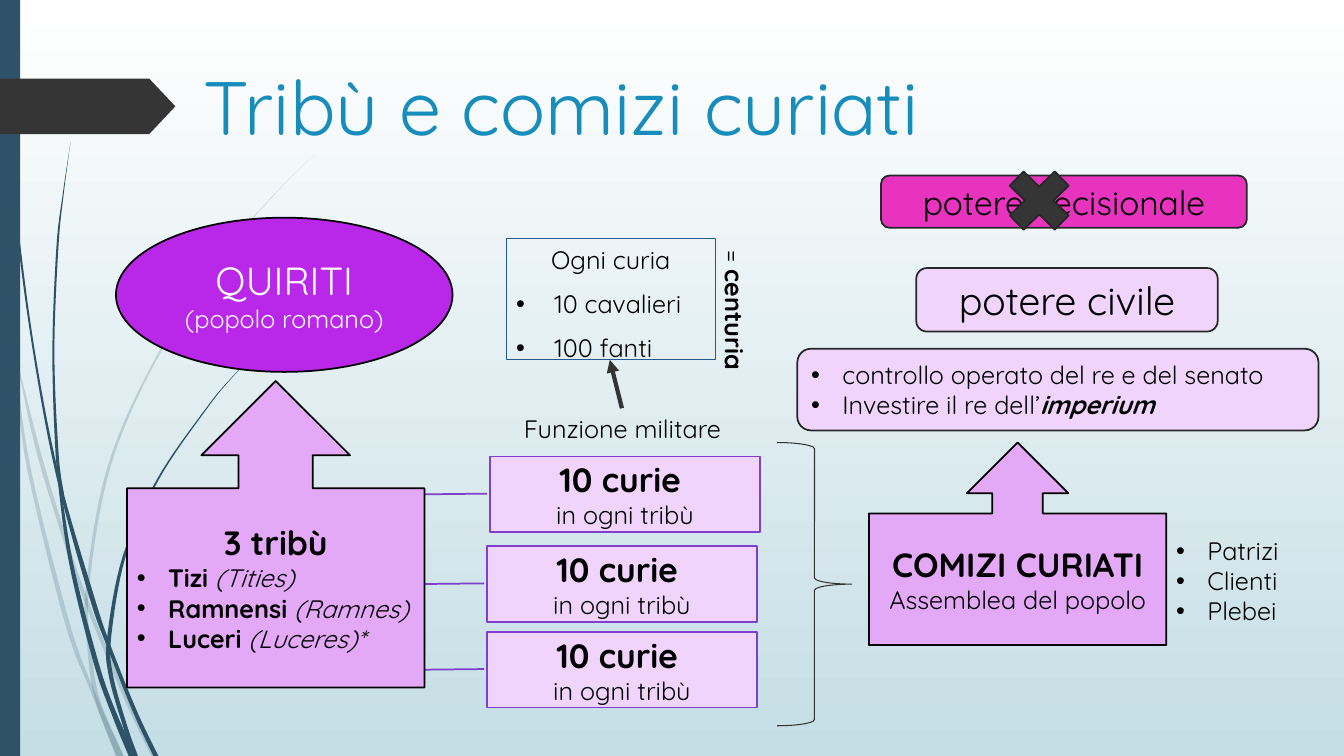
from dataclasses import dataclass

from lxml import etree
from pptx import Presentation
from pptx.dml.color import RGBColor
from pptx.enum.shapes import MSO_CONNECTOR, MSO_SHAPE
from pptx.enum.text import MSO_ANCHOR, MSO_AUTO_SIZE, PP_ALIGN
from pptx.oxml.ns import qn
from pptx.util import Inches, Pt

RECT, ELLIPSE, ROUNDED = MSO_SHAPE.RECTANGLE, MSO_SHAPE.OVAL, MSO_SHAPE.ROUNDED_RECTANGLE
UP_ARROW, CALLOUT = MSO_SHAPE.UP_ARROW_CALLOUT, MSO_SHAPE.LINE_CALLOUT_1
BRACE, CROSS, TAG = MSO_SHAPE.RIGHT_BRACE, MSO_SHAPE.MATH_MULTIPLY, MSO_SHAPE.PENTAGON
STRAIGHT = MSO_CONNECTOR.STRAIGHT
FIXED_SIZE = MSO_AUTO_SIZE.NONE
LEFT, CENTER = PP_ALIGN.LEFT, PP_ALIGN.CENTER
TOP, MIDDLE = MSO_ANCHOR.TOP, MSO_ANCHOR.MIDDLE

WHITE = RGBColor(0xFF, 0xFF, 0xFF)
BLACK = RGBColor(0x00, 0x00, 0x00)
MIST = RGBColor(0xC5, 0xDE, 0xE5)
NAVY = RGBColor(0x2E, 0x53, 0x69)
FRAME_BLUE = RGBColor(0x26, 0x59, 0x91)
TITLE_BLUE = RGBColor(0x17, 0x8D, 0xBB)
CHARCOAL = RGBColor(0x35, 0x35, 0x35)
GRAPHITE = RGBColor(0x33, 0x33, 0x33)
OUTLINE = RGBColor(0x27, 0x27, 0x27)
LILAC = RGBColor(0xF1, 0xD4, 0xFB)
ORCHID = RGBColor(0xE3, 0xA9, 0xF6)
VIOLET = RGBColor(0x7E, 0x40, 0xCC)
PURPLE = RGBColor(0xB9, 0x27, 0xE9)
MAGENTA = RGBColor(0xE8, 0x33, 0xBF)

COLUMNS, ROWS = 40, 30

# Centre line of each grass blade: column, row, width in columns
PALE_BLADES = [
    [(0, 11.6, 0), (0.3, 13.9, 0.04), (0.48, 15.04, 0.06), (0.89, 18.78, 0.11),
     (2.02, 24.8, 0.14), (2.78, 27.5, 0.12), (3.57, 30, 0.2)],
    [(0.42, 13.8, 0), (1.08, 17.6, 0.12), (1.8, 20.84, 0.12), (2.58, 23.9, 0.12),
     (3.75, 27.7, 0.13), (4.58, 30, 0.15)],
    [(9.36, 6.12, 0), (8.04, 7.9, 0.02), (6.86, 9.78, 0.04), (4.77, 13.94, 0.06),
     (3.26, 18.46, 0.09), (2.6, 23.36, 0.1), (2.67, 25.84, 0.12), (2.91, 27.8, 0.14), (3.57, 30, 0.24)],
]
DARK_BLADES = [
    [(0.1, 0, 0.03), (0.22, 4.4, 0.03), (0.54, 9.3, 0.06), (1.04, 14.2, 0.06), (1.72, 18.9, 0.09),
     (2.72, 23.64, 0.15), (3.25, 25.68, 0.12), (4.03, 28.28, 0.13), (4.64, 30, 0.15)],
    [(1.7, 18.5, 0.06), (2.1, 22.24, 0.12), (2.86, 26.3, 0.15), (3.42, 28.4, 0.16), (3.95, 30, 0.24)],
    [(2.1, 5.64, 0), (1.88, 7.72, 0.03), (1.71, 9.8, 0.06), (1.59, 13.96, 0.06),
     (1.7, 18, 0.09), (1.86, 19.6, 0.09)],
    [(7.8, 13.76, 0), (6.93, 14.94, 0.02), (6.14, 16.22, 0.04), (4.71, 19, 0.06),
     (3.7, 22.06, 0.09), (3.25, 25.28, 0.12), (3.3, 26.8, 0.13), (3.72, 28.8, 0.13), (4.04, 30, 0.13)],
]


@dataclass
class Words:
    """A paragraph: runs are (text, style) pairs, style made of the letters b and i."""
    runs: list
    size: int = 18
    bullet: bool = False
    align: int = CENTER
    before: int = 0
    indent: float = 0.31


def bullet(*runs, **options):
    return Words(list(runs), bullet=True, align=LEFT, **options)


def smooth(knots, steps=8):
    """Points of a Catmull-Rom curve through the knots."""
    ends = [knots[0], *knots, knots[-1]]
    curve = []
    for a, b, c, d in zip(ends, ends[1:], ends[2:], ends[3:]):
        for step in range(steps):
            t = step / steps
            curve.append([(2 * q + (r - p) * t + (2 * p - 5 * q + 4 * r - s) * t ** 2
                           + (3 * q - p - 3 * r + s) * t ** 3) / 2
                          for p, q, r, s in zip(a, b, c, d)])
    return curve + [list(knots[-1])]


class Diagram:
    font = "Quicksand"

    def __init__(self, deck):
        self.column = deck.slide_width / COLUMNS
        self.row = deck.slide_height / ROWS
        self.slide = deck.slides.add_slide(deck.slide_layouts[1])
        self.shapes = self.slide.shapes

    def at(self, x, y):
        return round(x * self.column), round(y * self.row)

    def box(self, x, y, w, h):
        return *self.at(x, y), *self.at(w, h)

    def background(self, start, end):
        fill = self.slide.background.fill
        fill.gradient()
        fill.gradient_angle = 270
        for stop, color in zip(fill.gradient_stops, (start, end)):
            stop.color.rgb = color

    def paint(self, shape, fill=None, line=None, weight=1.25):
        if fill is None:
            shape.fill.background()
        else:
            shape.fill.solid()
            shape.fill.fore_color.rgb = fill
        if line is None:
            shape.line.fill.background()
        else:
            shape.line.color.rgb = line
            shape.line.width = Pt(weight)

    def add_words(self, frame, paragraphs, color=BLACK, anchor=MIDDLE, wrap=True):
        frame.word_wrap = wrap
        frame.auto_size = FIXED_SIZE
        frame.vertical_anchor = anchor
        for number, words in enumerate(paragraphs):
            paragraph = frame.add_paragraph() if number else frame.paragraphs[0]
            props = paragraph._p.get_or_add_pPr()
            indent = Inches(words.indent) if words.bullet else 0
            props.set("marL", str(indent))
            props.set("indent", str(-indent))
            if words.bullet:
                etree.SubElement(props, qn("a:buFont")).set("typeface", "Arial")
                etree.SubElement(props, qn("a:buChar")).set("char", "•")
            else:
                etree.SubElement(props, qn("a:buNone"))
            paragraph.alignment = words.align
            paragraph.space_before = Pt(words.before)
            for text, style in words.runs:
                run = paragraph.add_run()
                run.text = text
                run.font.name = self.font
                run.font.size = Pt(words.size)
                run.font.color.rgb = color
                run.font.bold = "b" in style
                run.font.italic = "i" in style

    def placeholder(self, holder, place, paragraphs, color=BLACK):
        holder.left, holder.top, holder.width, holder.height = self.box(*place)
        self.add_words(holder.text_frame, paragraphs, color, TOP)

    def shape(self, kind, place, fill=None, line=None, paragraphs=(), color=BLACK, weight=1.25, adjust=()):
        shape = self.shapes.add_shape(kind, *self.box(*place))
        shape.shadow.inherit = False
        self.paint(shape, fill, line, weight)
        for number, value in enumerate(adjust):
            shape.adjustments[number] = value
        if paragraphs:
            self.add_words(shape.text_frame, paragraphs, color)

    def label(self, place, paragraphs, rotation=0):
        label = self.shapes.add_textbox(*self.box(*place))
        label.rotation = rotation
        self.add_words(label.text_frame, paragraphs, anchor=TOP, wrap=False)

    def blade(self, knots, color, opacity):
        curve = smooth(knots)
        outline = [self.at(x - w / 2, y) for x, y, w in curve]
        outline += [self.at(x + w / 2, y) for x, y, w in reversed(curve)]
        builder = self.shapes.build_freeform(*outline[0])
        builder.add_line_segments(outline[1:])
        blade = builder.convert_to_shape()
        blade.shadow.inherit = False
        self.paint(blade, color)
        shade = blade._element.spPr.find(qn("a:solidFill"))[0]
        etree.SubElement(shade, qn("a:alpha")).set("val", str(opacity * 1000))

    def arrow(self, start, end, color, weight):
        arrow = self.shapes.add_connector(STRAIGHT, *self.at(*start), *self.at(*end))
        arrow.line.color.rgb = color
        arrow.line.width = Pt(weight)
        stroke = arrow._element.spPr.find(qn("a:ln"))
        etree.SubElement(stroke, qn("a:tailEnd")).set("type", "triangle")
        etree.SubElement(arrow._element.spPr, qn("a:effectLst"))


def main():
    deck = Presentation()
    deck.slide_width, deck.slide_height = Inches(13.33), Inches(7.5)
    diagram = Diagram(deck)
    diagram.background(WHITE, MIST)
    for blades, opacity in ((PALE_BLADES, 20), (DARK_BLADES, 100)):
        for knots in blades:
            diagram.blade(knots, NAVY, opacity)
    diagram.shape(RECT, (0, 0, 0.6, ROWS), NAVY)
    diagram.shape(TAG, (0, 3.12, 5.22, 2.2), CHARCOAL, adjust=[0.47])

    title, curia = diagram.slide.placeholders
    diagram.placeholder(title, (5.76, 2.16, 31.32, 4.6),
                        [Words([("Tribù e comizi curiati", "")], 54, align=LEFT)], TITLE_BLUE)
    diagram.placeholder(curia, (15.06, 9.48, 6.24, 4.8), [
        Words([("Ogni curia", "")]),
        *(bullet((troops, ""), before=10, indent=0.38) for troops in ("10 cavalieri", "100 fanti"))])
    diagram.paint(curia, line=FRAME_BLUE, weight=0.75)

    for x, y in ((14.49, 25.08), (14.49, 21.68), (14.58, 18.12)):
        diagram.shape(CALLOUT, (x, y, 8.04, 3), LILAC, VIOLET,
                      [Words([("10 curie ", "b")], 24), Words([("in ogni tribù", "")])],
                      adjust=[0.5, -0.27, 0.49, -0.01])

    diagram.shape(ELLIPSE, (3.45, 8.64, 10.02, 6.12), PURPLE, BLACK,
                  [Words([("QUIRITI", "")], 28), Words([("(popolo romano)", "")])], WHITE)
    tribes = (("Tizi", "Tities)"), ("Ramnensi", "Ramnes)"), ("Luceri", "Luceres)*"))
    diagram.shape(UP_ARROW, (3.78, 15.12, 8.85, 12.16), ORCHID, BLACK, [
        Words([("3 tribù", "b")], 24),
        *(bullet((tribe, "b"), (f" ({latin}", "i")) for tribe, latin in tribes)])
    diagram.shape(UP_ARROW, (25.86, 17.56, 8.85, 8.04), ORCHID, BLACK,
                  [Words([("COMIZI CURIATI", "b")], 24), Words([("Assemblea del popolo", "")])])
    diagram.shape(BRACE, (23.13, 17.56, 2.22, 11.24), line=GRAPHITE, weight=0.75)

    diagram.label((15.18, 16.2, 6.69, 1.6), [Words([("Funzione militare", "")])])
    diagram.label((34.71, 21.04, 3.84, 4.04),
                  [bullet((members, "")) for members in ("Patrizi", "Clienti", "Plebei")])
    diagram.label((19.71, 11.64, 4.32, 1.6),
                  [Words([("= ", ""), ("centuria", "b")], align=LEFT)], rotation=90)
    diagram.arrow((18.51, 16.2), (18.15, 14.28), GRAPHITE, 3)

    diagram.shape(ROUNDED, (23.73, 13.84, 15.51, 3.24), LILAC, OUTLINE, [
        bullet(("controllo operato del re e del senato", "")),
        bullet(("Investire il re dell’", ""), ("imperium", "bi"))])
    diagram.shape(ROUNDED, (26.22, 6.96, 10.89, 2.08), MAGENTA, OUTLINE,
                  [Words([("potere decisionale", "")], 24)])
    diagram.shape(CROSS, (29.64, 6.28, 2.58, 3.36), CHARCOAL, OUTLINE)
    diagram.shape(ROUNDED, (27.27, 10.64, 8.97, 2.52), LILAC, OUTLINE,
                  [Words([("potere civile", "")], 28)])
    deck.save("out.pptx")


if __name__ == "__main__":
    main()
